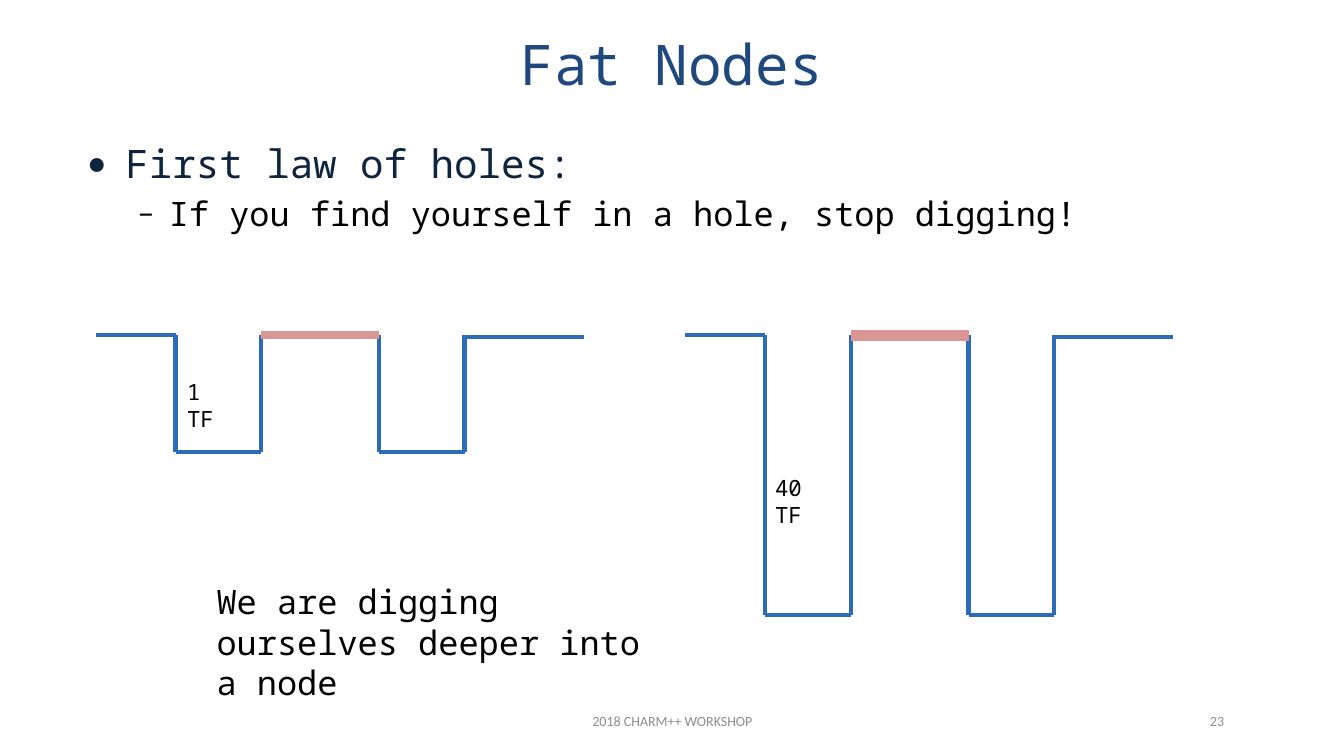
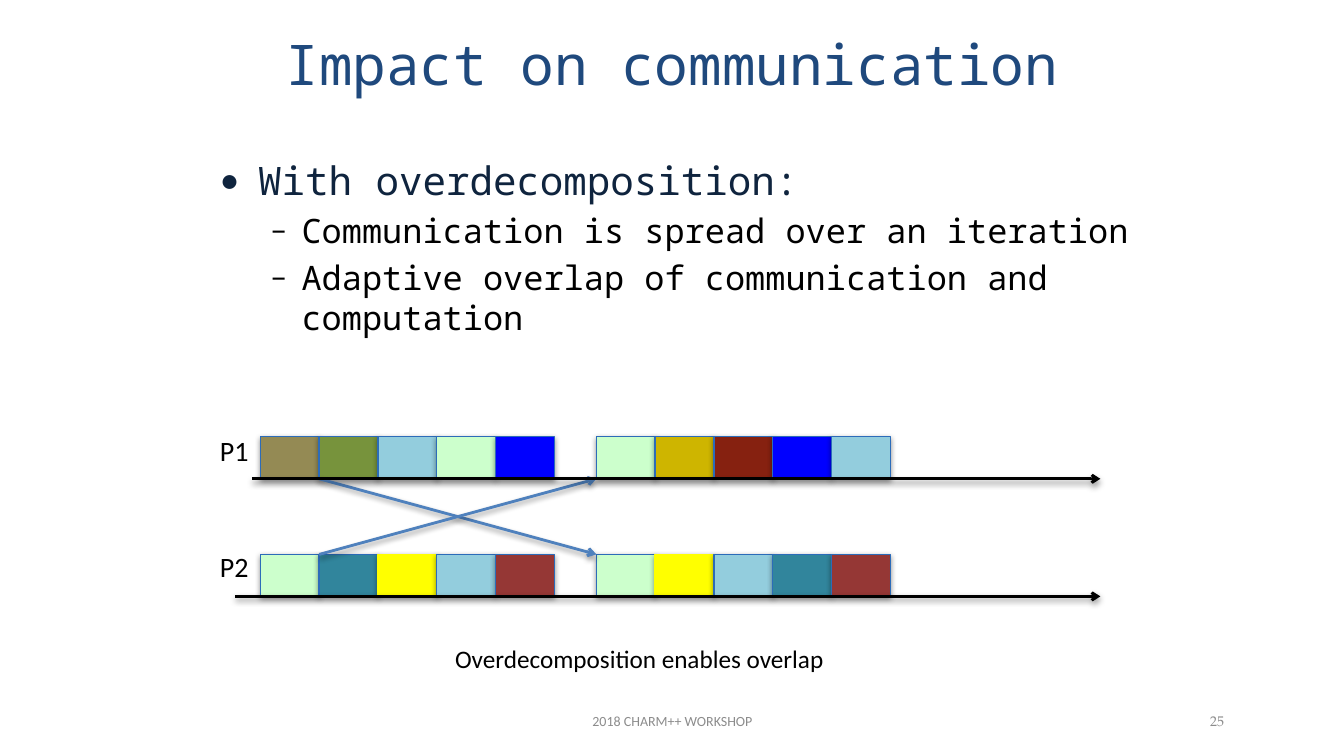
from lxml import etree
from pptx import Presentation, util as u
from pptx.dml.color import RGBColor
from pptx.enum import shapes as kinds, text as t
from pptx.oxml.ns import qn

# Shared style: a grid of 160 columns by 90 rows
CELL = 1 / 12
COLORS = {
    "title": "1F497D", "heading": "0F243E", "text": "000000", "footer": "8C8C8C",
    "wall": "2C6CB9", "bridge": "D99694", "message": "4F81BD",
    "olive": "948A54", "green": "77933C", "sky": "93CDDD", "mint": "CCFFCC",
    "blue": "0000FF", "gold": "CEB500", "brick": "862110", "teal": "31859C",
    "yellow": "FFFF00", "red": "953735",
}
MONO, SANS, SERIF = "Noto Sans Mono", "Calibri", "TeX Gyre Pagella"
LEVELS = [  # bullet, left margin, hanging indent, size, colour
    ("•", 0.38, 0.38, 28, "heading"),
    ("–", 0.81, 0.31, 24, "text"),
]
ALIGN, ANCHOR = t.PP_ALIGN, t.MSO_ANCHOR


def grid(*cells):
    return [u.Inches(cell * CELL) for cell in cells]


def color(name):
    return RGBColor.from_string(COLORS[name])


# Text
def write(paragraph, words, size=24, font=MONO, ink="text", align=ALIGN.LEFT):
    paragraph.alignment = align
    run = paragraph.add_run()
    run.text = words
    run.font.size, run.font.name = u.Pt(size), font
    run.font.color.rgb = color(ink)


def add_frame(slide, box, anchor=ANCHOR.TOP):
    frame = slide.shapes.add_textbox(*grid(*box)).text_frame
    frame.word_wrap = True
    frame.vertical_anchor = anchor
    return frame


def add_text(slide, box, words, anchor=ANCHOR.TOP, **style):
    write(add_frame(slide, box, anchor).paragraphs[0], words, **style)


def add_bullets(slide, box, items):
    frame = add_frame(slide, box)
    for index, (level, words) in enumerate(items):
        bullet, margin, hanging, size, ink = LEVELS[level]
        paragraph = frame.add_paragraph() if index else frame.paragraphs[0]
        paragraph.level = level
        paragraph.space_before = u.Pt(0.2 * size if index else 0)
        properties = paragraph._p.get_or_add_pPr()
        properties.set("marL", str(u.Inches(margin)))
        properties.set("indent", str(-u.Inches(hanging)))
        etree.SubElement(properties, qn("a:buFont"), typeface=SANS)
        etree.SubElement(properties, qn("a:buChar"), char=bullet)
        write(paragraph, words, size=size, ink=ink)


# Lines and blocks
def add_effects(shape, distance=None, opacity=40):
    """Set a soft shadow straight below, or none without a distance."""
    effects = etree.SubElement(shape._element.spPr, qn("a:effectLst"))
    if distance:
        shadow = etree.SubElement(
            effects, qn("a:outerShdw"), blurRad=str(u.Pt(4)),
            dist=str(u.Pt(distance)), dir="5400000", rotWithShape="0")
        tone = etree.SubElement(shadow, qn("a:srgbClr"), val=COLORS["text"])
        etree.SubElement(tone, qn("a:alpha"), val=str(opacity * 1000))


def add_line(shapes, start, end, ink, width, arrow=False):
    line = shapes.add_connector(kinds.MSO_CONNECTOR.STRAIGHT, *grid(*start, *end))
    line.line.color.rgb = color(ink)
    line.line.width = u.Pt(width)
    if arrow:
        etree.SubElement(line.line._get_or_add_ln(), qn("a:tailEnd"), type="arrow")
    add_effects(line, 2 if arrow else None)


def add_block(slide, box, fill):
    block = slide.shapes.add_shape(kinds.MSO_SHAPE.RECTANGLE, *grid(*box))
    block.fill.solid()
    block.fill.fore_color.rgb = color(fill)
    block.line.color.rgb = color("yellow" if fill == "yellow" else "wall")
    block.line.width = u.Pt(1)
    add_effects(block, 1.6, 42)


def add_holes(slide, left, bottom, bridge_width):
    """Two holes in the ground, with a bridge between them."""
    top, ledge = 39.9, 40.1
    edges = [left + step for step in (0, 9.5, 19.7, 33.7, 43.9, 58.1)]
    start, *walls, end = edges
    shapes = slide.shapes.add_group_shape().shapes
    for wall in walls:
        add_line(shapes, (wall, top), (wall, bottom), "wall", 3)
    for near, far in (walls[:2], walls[2:]):
        add_line(shapes, (near, bottom), (far, bottom), "wall", 3)
    add_line(shapes, (start, top), (walls[0], top), "wall", 3)
    add_line(shapes, (walls[3], ledge), (end, ledge), "wall", 3)
    add_line(shapes, (walls[1], top), (walls[2], top), "bridge", bridge_width)


def add_blocks(slide, left, top, fills):
    for index, fill in enumerate(fills.split()):
        add_block(slide, (left + 7 * index, top, 7, 5), fill)


# Title and footer common to the slides
def add_slide(presentation, title, number, number_font=SANS):
    slide = presentation.slides.add_slide(presentation.slide_layouts[6])
    add_text(slide, (5.3, 2, 149.3, 11), title, ANCHOR.MIDDLE,
             size=40, ink="title", align=ALIGN.CENTER)
    footer = {"anchor": ANCHOR.MIDDLE, "size": 10, "ink": "footer"}
    add_text(slide, (130, 83.4, 16.9, 4.8), number,
             font=number_font, align=ALIGN.RIGHT, **footer)
    add_text(slide, (49.2, 83.4, 61.7, 4.8), "2018 CHARM++ WORKSHOP",
             font=SANS, align=ALIGN.CENTER, **footer)
    return slide


def build_fat_nodes(presentation):
    slide = add_slide(presentation, "Fat Nodes", "23")
    add_bullets(slide, (9.2, 16, 142.8, 21.8), [
        (0, "First law of holes:"),
        (1, "If you find yourself in a hole, stop digging!"),
    ])
    add_holes(slide, 11.4, 53.8, 6)
    add_holes(slide, 81.6, 73.2, 8)
    add_text(slide, (21.1, 44.4, 8.2, 4.4), "1 TF", size=16)
    add_text(slide, (91.1, 55.9, 9.8, 4.4), "40 TF", size=16)
    add_text(slide, (24.6, 68.6, 53.8, 10.9),
             "We are digging ourselves deeper into a node")


def build_communication(presentation):
    slide = add_slide(presentation, "Impact on communication", "25", SERIF)
    add_bullets(slide, (25, 18, 111, 28), [
        (0, "With overdecomposition:"),
        (1, "Communication is spread over an iteration"),
        (1, "Adaptive overlap of communication and computation"),
    ])
    # Work blocks of both processors, in two iterations
    first, second, upper, lower = 31, 71, 52, 66
    add_blocks(slide, first, upper, "olive green sky mint blue")
    add_blocks(slide, second, lower, "mint yellow sky teal red")
    add_blocks(slide, second, upper, "mint gold brick blue sky")
    add_blocks(slide, first, lower, "mint teal yellow sky red")
    # Messages, then time axes
    sent, base = first + 7, upper + 5
    for start, end, ink in (
        ((sent, base), (second, lower), "message"),
        ((sent, lower), (second, base), "message"),
        ((30, base), (131, base), "text"),
        ((28, lower + 5), (131, lower + 5), "text"),
    ):
        add_line(slide.shapes, start, end, ink, 2, arrow=True)
    for top, name in ((51, "P1"), (64.8, "P2")):
        add_text(slide, (25, top, 7, 5.3), name, size=20, font=SANS)
    add_text(slide, (53, 76, 60, 4.8), "Overdecomposition enables overlap",
             size=18, font=SANS)


def main():
    presentation = Presentation()
    presentation.slide_width, presentation.slide_height = grid(160, 90)
    build_fat_nodes(presentation)
    build_communication(presentation)
    presentation.save("out.pptx")


if __name__ == "__main__":
    main()
